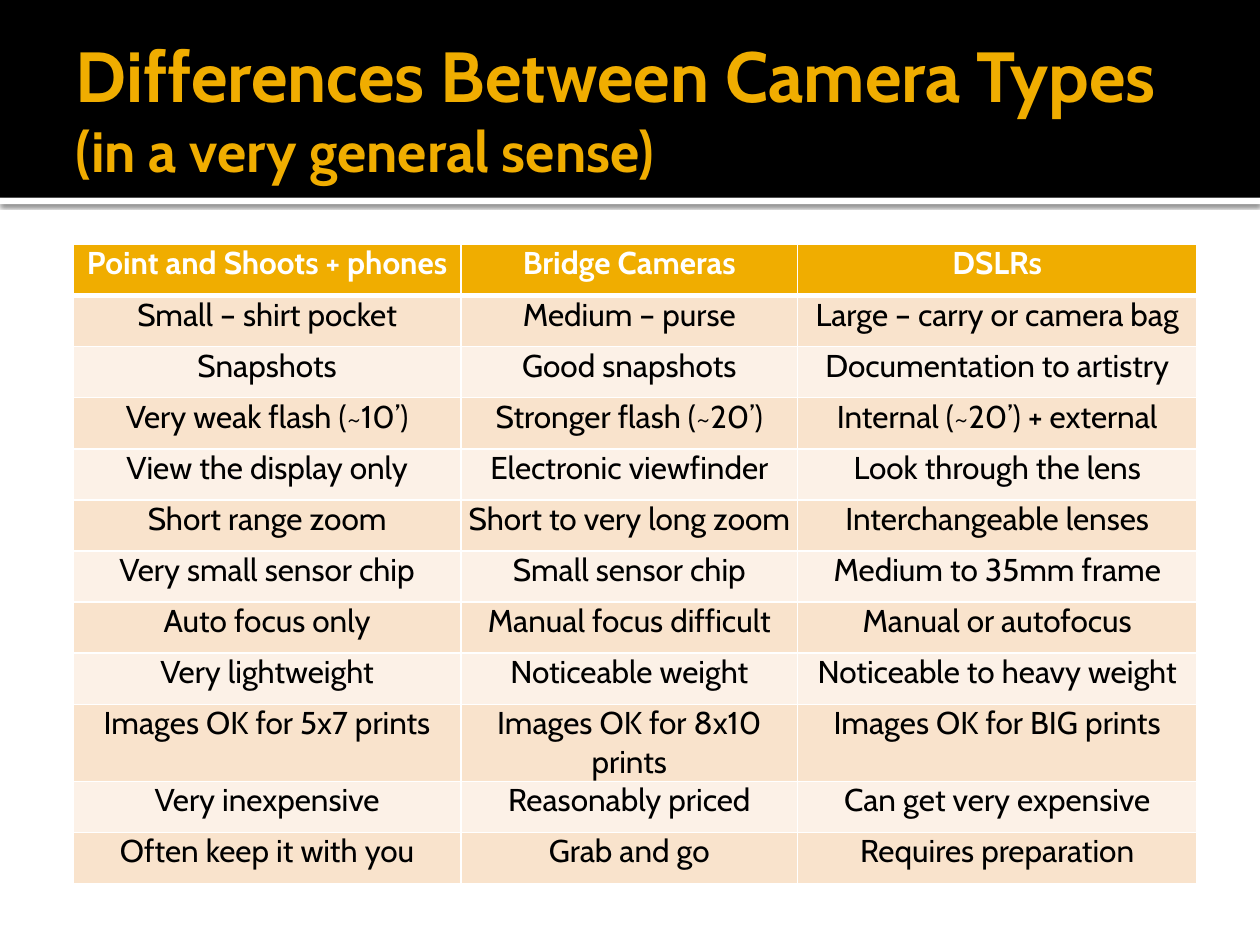
from lxml import etree
from pptx import Presentation
from pptx.dml.color import RGBColor
from pptx.enum import shapes, text
from pptx.oxml import ns
from pptx.util import Inches, Pt

FONT = "Cabin"
GOLD, WHITE, BLACK = "F0AD00", "FFFFFF", "000000"
BANDS = ["F9E3CC", "FCF1E7"]

TITLE = [("Differences Between Camera Types", 40.5),
         ("(in a very general sense)", 32.4)]
HEADER = ("Point and Shoots + phones", "Bridge Cameras", "DSLRs")
ROWS = [
    ("Small – shirt pocket", "Medium – purse", "Large – carry or camera bag"),
    ("Snapshots", "Good snapshots", "Documentation to artistry"),
    ("Very weak flash (~10’)", "Stronger flash (~20’)", "Internal (~20’) + external"),
    ("View the display only", "Electronic viewfinder", "Look through the lens"),
    ("Short range zoom", "Short to very long zoom", "Interchangeable lenses"),
    ("Very small sensor chip", "Small sensor chip", "Medium to 35mm frame"),
    ("Auto focus only", "Manual focus difficult", "Manual or autofocus"),
    ("Very lightweight", "Noticeable weight", "Noticeable to heavy weight"),
    ("Images OK for 5x7 prints", "Images OK for 8x10 prints", "Images OK for BIG prints"),
    ("Very inexpensive", "Reasonably priced", "Can get very expensive"),
    ("Often keep it with you", "Grab and go", "Requires preparation"),
]
COL_WIDTHS = [3.08, 2.67, 3.17]
TABLE_HEIGHT = 4.87


def rgb(color):
    return RGBColor.from_string(color)


def add_run(p, words, size=18, color=BLACK, bold=False):
    r = p.add_run()
    r.text = words
    r.font.name, r.font.size, r.font.bold = FONT, Pt(size), bold
    r.font.color.rgb = rgb(color)


def set_margins(box, left=0, top=0, right=0, bottom=0):
    box.margin_left, box.margin_top = Inches(left), Inches(top)
    box.margin_right, box.margin_bottom = Inches(right), Inches(bottom)


def add_band(s, top, height, color):
    sp = s.shapes.add_shape(shapes.MSO_SHAPE.RECTANGLE, 0, Inches(top),
                            Inches(10), Inches(height))
    sp.shadow.inherit = False
    sp.fill.solid()
    sp.fill.fore_color.rgb = rgb(color)
    sp.line.fill.background()
    return sp


def add_shadow(sp, blur, dist, alpha):
    """Give a shape a black shadow that falls straight down."""
    effects = sp._element.spPr.find(ns.qn("a:effectLst"))
    shadow = etree.SubElement(effects, ns.qn("a:outerShdw"), blurRad=str(Pt(blur)),
                              dist=str(Pt(dist)), dir="5400000",
                              algn="t", rotWithShape="0")
    color = etree.SubElement(shadow, ns.qn("a:srgbClr"), val=BLACK)
    etree.SubElement(color, ns.qn("a:alpha"), val=str(alpha * 1000))


def set_borders(cell, top=1, bottom=1):
    tc_pr = cell._tc.get_or_add_tcPr()
    for side, width in (("L", 1), ("R", 1), ("T", top), ("B", bottom)):
        ln = etree.SubElement(tc_pr, ns.qn(f"a:ln{side}"), w=str(Pt(width)))
        fill = etree.SubElement(ln, ns.qn("a:solidFill"))
        etree.SubElement(fill, ns.qn("a:srgbClr"), val=WHITE)


def add_title(s):
    # The title goes in front of the bands drawn before it.
    title = s.shapes.title
    s.shapes._spTree.append(title._element)
    title.left, title.top = Inches(0.5), Inches(0.17)
    title.width, title.height = Inches(9), Inches(1.37)
    tf = title.text_frame
    tf.word_wrap = True
    tf.auto_size = text.MSO_AUTO_SIZE.NONE
    tf.vertical_anchor = text.MSO_ANCHOR.MIDDLE
    set_margins(tf, 0.1, 0.05, 0.05, 0.05)
    p = tf.paragraphs[0]
    p.alignment = text.PP_ALIGN.LEFT
    for i, (words, size) in enumerate(TITLE):
        if i:
            p.add_line_break()
        add_run(p, words, size, GOLD, bold=True)


def add_comparison(s):
    rows = [HEADER] + ROWS
    table = s.shapes.add_table(len(rows), len(HEADER), Inches(0.58), Inches(1.94),
                               Inches(sum(COL_WIDTHS)), Inches(TABLE_HEIGHT)).table
    for column, width in zip(table.columns, COL_WIDTHS):
        column.width = Inches(width)
    for i, words in enumerate(rows):
        table.rows[i].height = Inches(TABLE_HEIGHT / len(rows))
        is_header = i == 0
        for j, entry in enumerate(words):
            cell = table.cell(i, j)
            set_margins(cell)
            set_borders(cell, top=3 if i == 1 else 1, bottom=3 if is_header else 1)
            cell.fill.solid()
            cell.fill.fore_color.rgb = rgb(GOLD if is_header else BANDS[(i - 1) % 2])
            p = cell.text_frame.paragraphs[0]
            p.alignment = text.PP_ALIGN.CENTER
            add_run(p, entry, color=WHITE if is_header else BLACK, bold=is_header)


def main():
    prs = Presentation()
    prs.slide_width, prs.slide_height = Inches(10), Inches(7.5)
    s = prs.slides.add_slide(prs.slide_layouts[5])
    rule = add_band(s, 1.57, 0.05, WHITE)
    add_shadow(rule, blur=2.5, dist=0.8, alpha=60)
    add_band(s, 0, 1.57, BLACK)
    add_title(s)
    add_comparison(s)
    prs.save("out.pptx")


if __name__ == "__main__":
    main()
